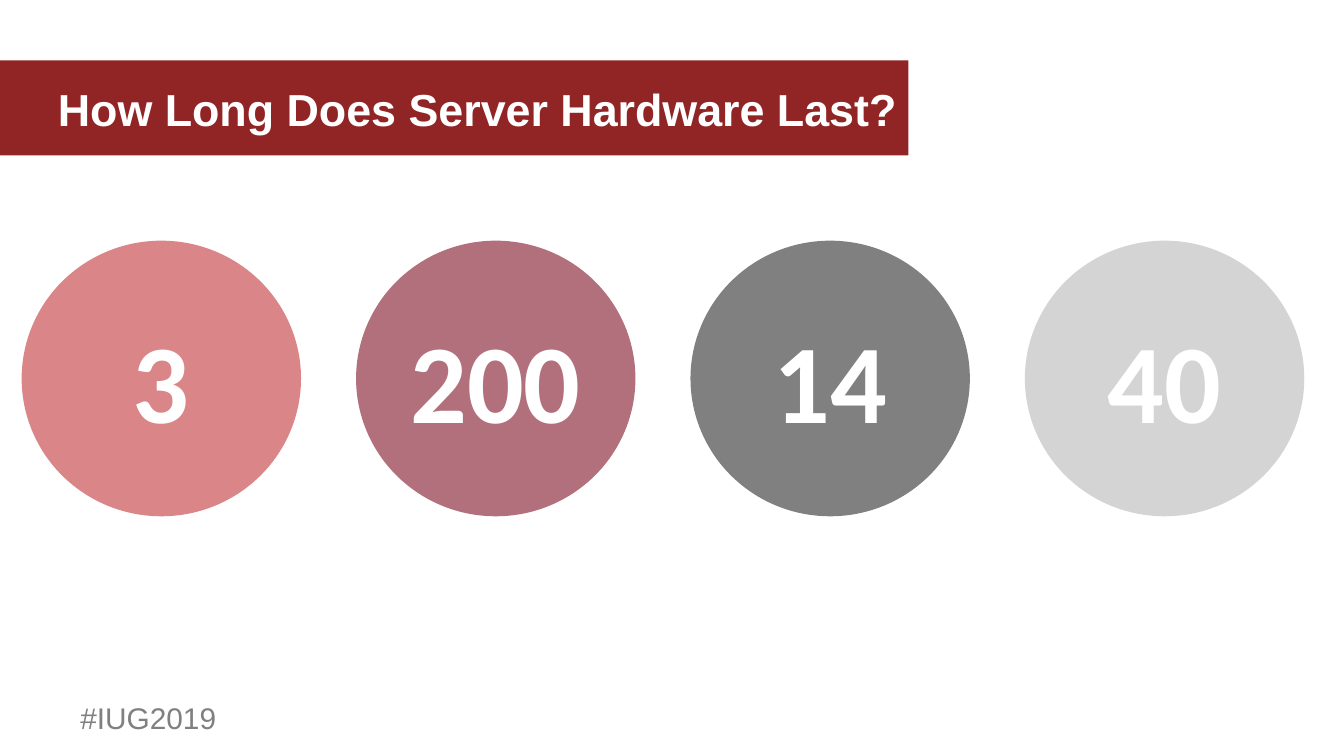
from lxml import etree
from pptx import Presentation
from pptx.dml.color import RGBColor
from pptx.enum.shapes import MSO_SHAPE
from pptx.enum.text import MSO_ANCHOR, MSO_AUTO_SIZE, PP_ALIGN
from pptx.oxml.ns import qn
from pptx.util import Cm, Pt

RECT, OVAL = MSO_SHAPE.RECTANGLE, MSO_SHAPE.OVAL
MIDDLE, LEFT, CENTER = MSO_ANCHOR.MIDDLE, PP_ALIGN.LEFT, PP_ALIGN.CENTER
NO_FIT = MSO_AUTO_SIZE.NONE

# Content
TITLE = "How Long Does Server Hardware Last?"
HASHTAG = "#IUG2019"
CIRCLES = [("3", "rose"), ("200", "mauve"), ("14", "gray"), ("40", "silver")]

# Formats
COLORS = {"maroon": "800000", "white": "FFFFFF", "rose": "DA8587",
          "mauve": "B2707D", "gray": "808080", "silver": "D4D4D4"}
TITLE_FONT = {"name": "Arial", "size": Pt(24), "bold": True}
HASHTAG_FONT = {"name": "Arial", "size": Pt(16)}
NUMBER_FONT = {"name": "Calibri", "size": Pt(60), "bold": True}

# Layout in centimetres
BANNER_TOP, BANNER_W, BANNER_H = 1.14, 17.17, 1.8
CIRCLE_LEFT, CIRCLE_TOP, CIRCLE_W, CIRCLE_H = 0.41, 4.55, 5.28, 5.21
CIRCLE_PITCH = 6.32


def set_text(tf, text, font, color, align=LEFT):
    tf.auto_size = NO_FIT
    p = tf.paragraphs[0]
    p.alignment = align
    r = p.add_run()
    r.text = text
    for key, value in font.items():
        setattr(r.font, key, value)
    r.font.color.rgb = RGBColor.from_string(COLORS[color])
    return p


def add_filled(s, kind, box, color):
    sp = s.shapes.add_shape(kind, *map(Cm, box))
    sp.shadow.inherit = False
    sp.fill.solid()
    sp.fill.fore_color.rgb = RGBColor.from_string(COLORS[color])
    sp.line.fill.background()
    return sp


prs = Presentation()
prs.slide_width, prs.slide_height = Cm(25.4), Cm(14.29)
s = prs.slides.add_slide(prs.slide_layouts[5])

# Title
title = s.shapes.title
title.left, title.top, title.width, title.height = map(Cm, (0.84, BANNER_TOP, 21.77, 1.83))
title.text_frame.vertical_anchor = MIDDLE
set_text(title.text_frame, TITLE, TITLE_FONT, "white")

# Translucent banner behind the title
banner = add_filled(s, RECT, (0, BANNER_TOP, BANNER_W, BANNER_H), "maroon")
rgb = banner.element.spPr.find(qn("a:solidFill")).find(qn("a:srgbClr"))
etree.SubElement(rgb, qn("a:alpha"), val="86000")
title.element.addprevious(banner.element)

# Hashtag
hashtag = s.shapes.add_textbox(*map(Cm, (1.27, 12.9, 3.1, 1.04)))
p = set_text(hashtag.text_frame, HASHTAG, HASHTAG_FONT, "gray")
p.line_spacing = 1.3
hashtag.text_frame.word_wrap = False

# Row of number circles
for i, (number, color) in enumerate(CIRCLES):
    left = CIRCLE_LEFT + i * CIRCLE_PITCH
    circle = add_filled(s, OVAL, (left, CIRCLE_TOP, CIRCLE_W, CIRCLE_H), color)
    circle.text_frame.vertical_anchor = MIDDLE
    set_text(circle.text_frame, number, NUMBER_FONT, "white", CENTER)

prs.save("out.pptx")
